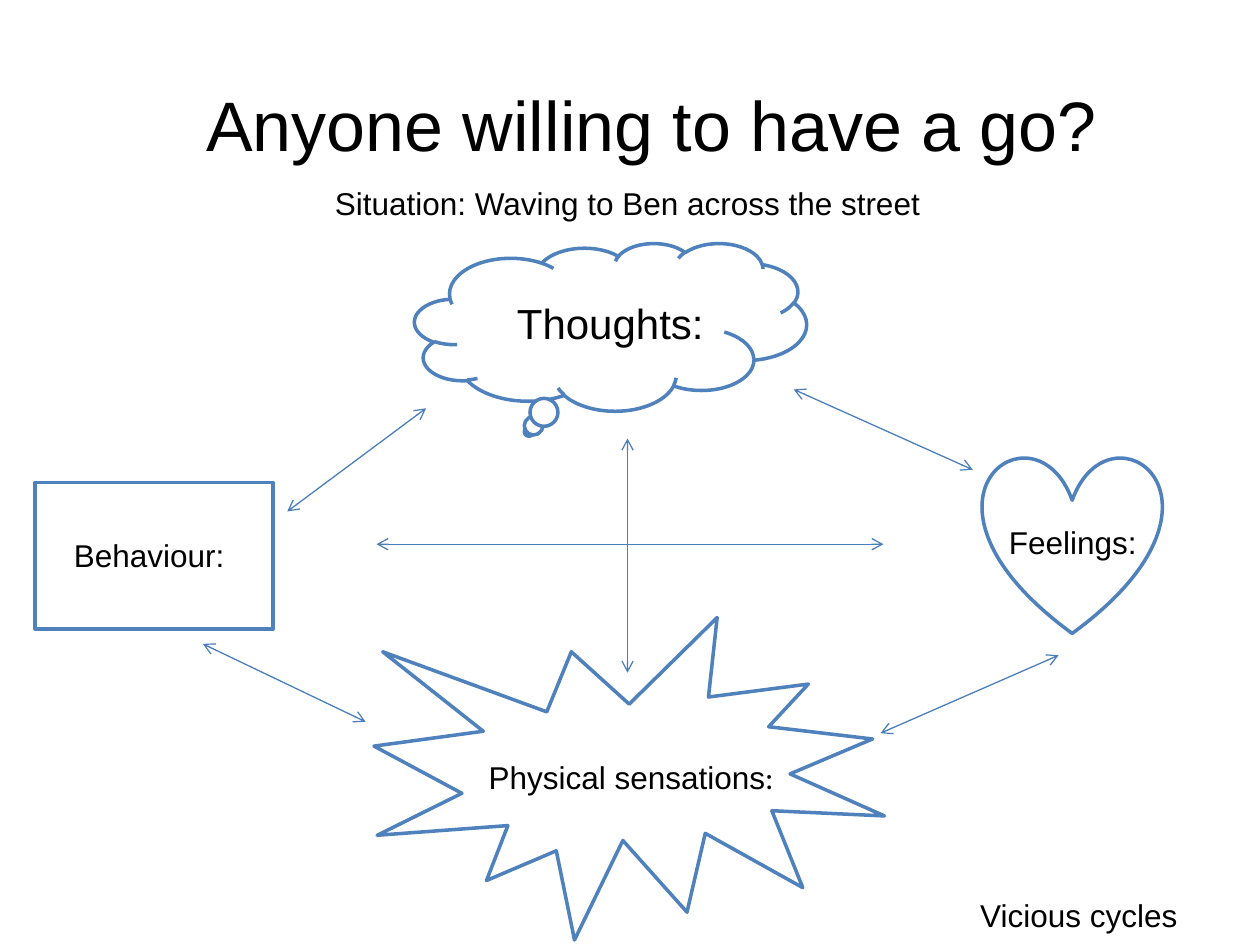
from dataclasses import dataclass

from lxml import etree
from pptx import Presentation
from pptx.dml.color import RGBColor
from pptx.enum import shapes, text
from pptx.oxml import ns
from pptx.util import Cm, Pt


@dataclass(frozen=True)
class Theme:
    paper: RGBColor = RGBColor(0xFF, 0xFF, 0xFF)
    ink: RGBColor = RGBColor(0, 0, 0)
    outline: RGBColor = RGBColor(0x4F, 0x81, 0xBD)
    arrow: RGBColor = RGBColor(0x4B, 0x7E, 0xBC)
    font: str = "Arial"
    alternate: str = "Calibri"
    title: int = 40
    thoughts: int = 24
    body: int = 18
    outline_width: float = 2
    arrow_width: float = 0.75


THEME = Theme()

SYMBOLS = {
    "sensations": (shapes.MSO_SHAPE.EXPLOSION1, (7.54, 12.45, 10.29, 6.5)),
    "feelings": (shapes.MSO_SHAPE.HEART, (19.81, 9.19, 3.61, 3.58)),
    "behaviour": (shapes.MSO_SHAPE.RECTANGLE, (0.71, 9.73, 4.8, 2.95)),
    "thoughts": (shapes.MSO_SHAPE.CLOUD_CALLOUT, (8.36, 4.9, 7.9, 3.38)),
}

CAPTIONS = [
    (["Anyone willing to have a go?"], (3.91, 1.52, 21.49, 1.96), THEME.title),
    (["Situation: Waving to Ben across the street"], (6.5, 3.58, 13.34, 1.02), THEME.body),
    (["Physical sensations", (":", THEME.alternate)], (9.6, 15.16, 8.2, 1.02), THEME.body),
    (["Behaviour:"], (1.24, 10.69, 4.6, 1.02), THEME.body),
    (["Feelings:"], (20.09, 10.41, 3.99, 1.02), THEME.body),
    (["Vicious cycles"], (19.51, 17.93, 5.41, 1.02), THEME.body),
]

LINKS = [
    ((5.79, 10.31), (8.59, 8.23)),
    ((16.0, 7.85), (19.61, 9.47)),
    ((17.75, 14.78), (21.34, 13.21)),
    ((4.09, 12.98), (7.37, 14.55)),
    ((12.65, 8.84), (12.65, 13.56)),
    ((7.59, 10.97), (17.81, 10.97)),
]


def lengths(values):
    return [Cm(value) for value in values]


def write(frame, parts, size=THEME.body, align=text.PP_ALIGN.LEFT,
          anchor=text.MSO_ANCHOR.TOP, left=0.25, right=0.25):
    frame.word_wrap = True
    frame.vertical_anchor = anchor
    frame.margin_left, frame.margin_right = lengths((left, right))
    line = frame.paragraphs[0]
    line.alignment = align
    for part in parts:
        words, face = (part, THEME.font) if isinstance(part, str) else part
        run = line.add_run()
        run.text = words
        run.font.name = face
        run.font.size = Pt(size)
        run.font.color.rgb = THEME.ink


def draw_symbol(slide, preset, place):
    symbol = slide.shapes.add_shape(preset, *lengths(place))
    symbol.shadow.inherit = False
    symbol.fill.solid()
    symbol.fill.fore_color.rgb = THEME.paper
    symbol.line.color.rgb = THEME.outline
    symbol.line.width = Pt(THEME.outline_width)
    return symbol


def draw_link(slide, start, end):
    link = slide.shapes.add_connector(
        shapes.MSO_CONNECTOR.STRAIGHT, *lengths(start + end))
    link.line.color.rgb = THEME.arrow
    link.line.width = Pt(THEME.arrow_width)
    stroke = link.line._get_or_add_ln()
    for tip in ("a:headEnd", "a:tailEnd"):
        etree.SubElement(stroke, ns.qn(tip), type="arrow")
    etree.SubElement(link._element.spPr, ns.qn("a:effectLst"))


def main():
    deck = Presentation()
    deck.slide_width, deck.slide_height = lengths((25.4, 19.05))
    slide = deck.slides.add_slide(deck.slide_layouts[6])

    symbols = {name: draw_symbol(slide, *look) for name, look in SYMBOLS.items()}
    write(symbols["thoughts"].text_frame, ["Thoughts:"], size=THEME.thoughts,
          align=text.PP_ALIGN.CENTER, anchor=text.MSO_ANCHOR.MIDDLE,
          left=0.6, right=0.05)

    for parts, place, size in CAPTIONS:
        caption = slide.shapes.add_textbox(*lengths(place))
        write(caption.text_frame, parts, size=size)

    for start, end in LINKS:
        draw_link(slide, start, end)

    deck.save("out.pptx")


if __name__ == "__main__":
    main()
